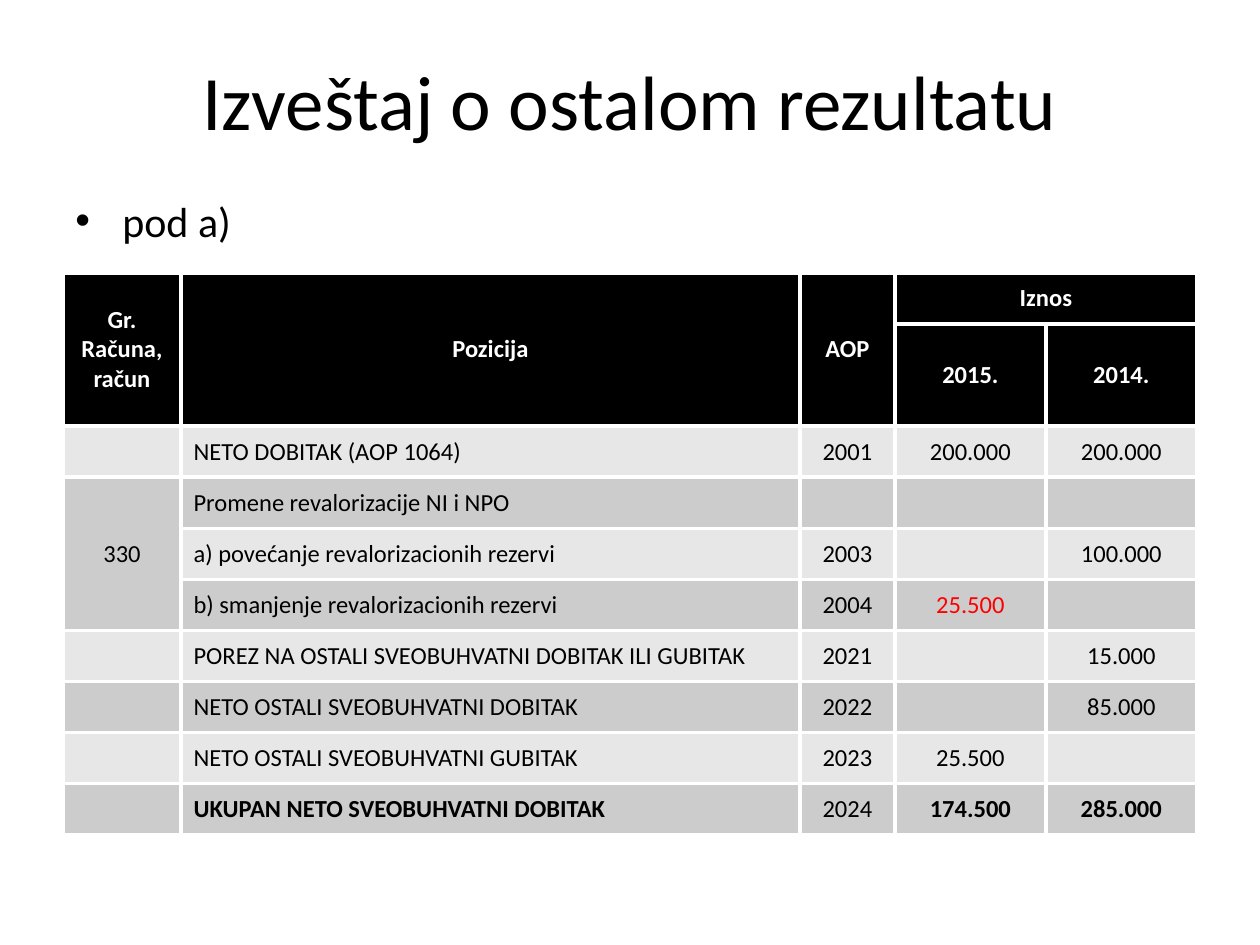
from lxml.etree import SubElement
from pptx import Presentation
from pptx.dml.color import RGBColor
from pptx.enum.text import MSO_ANCHOR, PP_ALIGN
from pptx.oxml.ns import qn
from pptx.util import Pt

TITLE = "Izveštaj o ostalom rezultatu"
BULLET = "pod a)"
ROWS = [
    ("Gr. Računa, račun", "Pozicija", "AOP", "Iznos", ""),
    ("", "", "", "2015.", "2014."),
    ("", "NETO DOBITAK (AOP 1064)", "2001", "200.000", "200.000"),
    ("330", "Promene revalorizacije NI i NPO", "", "", ""),
    ("", "a) povećanje revalorizacionih rezervi", "2003", "", "100.000"),
    ("", "b) smanjenje revalorizacionih rezervi", "2004", "25.500", ""),
    ("", "POREZ NA OSTALI SVEOBUHVATNI DOBITAK ILI GUBITAK", "2021", "", "15.000"),
    ("", "NETO OSTALI SVEOBUHVATNI DOBITAK", "2022", "", "85.000"),
    ("", "NETO OSTALI SVEOBUHVATNI GUBITAK", "2023", "25.500", ""),
    ("", "UKUPAN NETO SVEOBUHVATNI DOBITAK", "2024", "174.500", "285.000"),
]
MERGES = [((0, 0), (1, 0)), ((0, 1), (1, 1)), ((0, 2), (1, 2)),
          ((0, 3), (0, 4)), ((3, 0), (5, 0))]
BOLD_TOTALS = {(9, 1), (9, 3), (9, 4)}
RED_CELLS = {(5, 3)}
HEADER_ROWS = 2
COLUMN_WIDTHS = [118, 619, 95, 151, 151]
ROW_HEIGHT = 51
LEFT, WIDTH = 63, 1134
FONT = "Calibri"
BLACK, WHITE, RED = "000000", "FFFFFF", "FF0000"
BANDS = ["E7E7E7", "CCCCCC"]


def px(length):
    return round(length * 914400 / 126)


def color(value):
    return RGBColor.from_string(value)


def add_text(paragraph, text, size, fill=BLACK, bold=False):
    run = paragraph.add_run()
    run.text = text
    run.font.name = FONT
    run.font.size = Pt(size)
    run.font.bold = bold
    run.font.color.rgb = color(fill)


def add_borders(cell):
    properties = cell._tc.get_or_add_tcPr()
    for side in ("lnL", "lnR", "lnT", "lnB"):
        line = SubElement(properties, qn(f"a:{side}"), w=str(Pt(2.25)))
        solid = SubElement(line, qn("a:solidFill"))
        SubElement(solid, qn("a:srgbClr"), val=WHITE)


def add_title(slide):
    title = slide.shapes.title
    title.left, title.top, title.width, title.height = map(px, (LEFT, 21, WIDTH, 158))
    title.text_frame.vertical_anchor = MSO_ANCHOR.MIDDLE
    paragraph = title.text_frame.paragraphs[0]
    paragraph.alignment = PP_ALIGN.CENTER
    add_text(paragraph, TITLE, 44)


def add_bullet(slide):
    box = slide.shapes.add_textbox(*map(px, (LEFT, 189, WIDTH, 703)))
    box.text_frame.word_wrap = True
    paragraph = box.text_frame.paragraphs[0]
    properties = paragraph._p.get_or_add_pPr()
    properties.set("marL", str(px(47)))
    properties.set("indent", str(px(-47)))
    SubElement(properties, qn("a:buFont"), typeface="Arial")
    SubElement(properties, qn("a:buChar"), char="•")
    add_text(paragraph, BULLET, 24)


def add_report(slide):
    frame = slide.shapes.add_table(
        len(ROWS), len(COLUMN_WIDTHS),
        *map(px, (LEFT, 273, WIDTH, ROW_HEIGHT * len(ROWS))))
    table = frame.table
    for column, width in zip(table.columns, COLUMN_WIDTHS):
        column.width = px(width)
    for row_index, values in enumerate(ROWS):
        table.rows[row_index].height = px(ROW_HEIGHT)
        header = row_index < HEADER_ROWS
        for column_index, text in enumerate(values):
            position = (row_index, column_index)
            cell = table.cell(*position)
            add_borders(cell)
            cell.fill.solid()
            cell.fill.fore_color.rgb = color(BLACK if header else BANDS[row_index % 2])
            cell.vertical_anchor = MSO_ANCHOR.MIDDLE
            paragraph = cell.text_frame.paragraphs[0]
            centered = header or column_index != 1
            paragraph.alignment = PP_ALIGN.CENTER if centered else PP_ALIGN.LEFT
            if text:
                fill = WHITE if header else RED if position in RED_CELLS else BLACK
                add_text(paragraph, text, 14, fill, header or position in BOLD_TOTALS)
    for first, last in MERGES:
        table.cell(*first).merge(table.cell(*last))


def main():
    presentation = Presentation()
    presentation.slide_width, presentation.slide_height = px(1260), px(945)
    slide = presentation.slides.add_slide(presentation.slide_layouts[5])
    add_title(slide)
    add_report(slide)
    add_bullet(slide)
    presentation.save("out.pptx")


if __name__ == "__main__":
    main()
